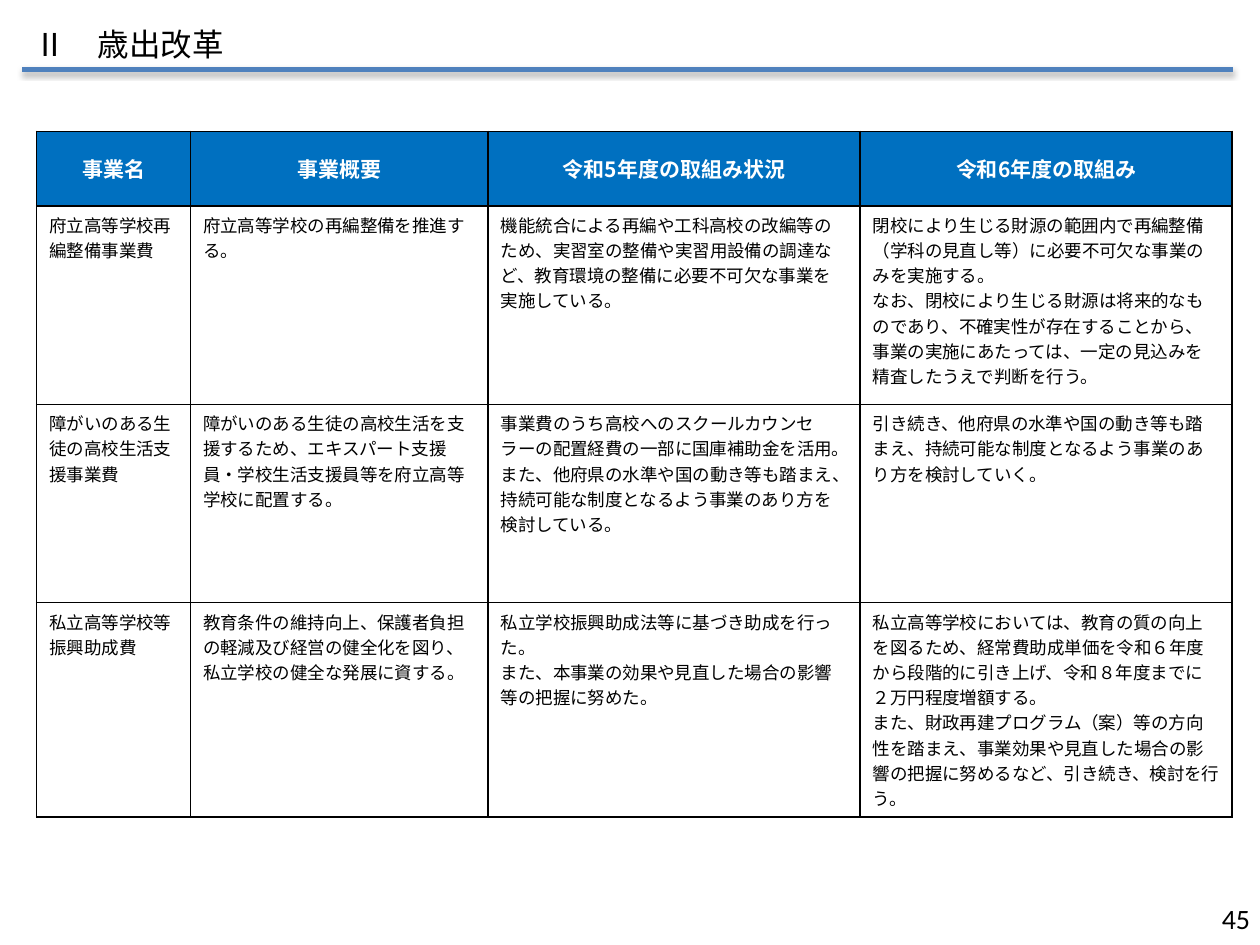
from lxml import etree
from pptx import Presentation, util as u
from pptx.dml.color import RGBColor
from pptx.enum import shapes, text
from pptx.oxml import parse_xml
from pptx.oxml.ns import nsdecls, qn

JAPANESE = "Noto Sans CJK JP"
HEADINGS = ["事業名", "事業概要", "令和5年度の取組み状況", "令和6年度の取組み"]
PROJECTS = [
    ["府立高等学校再編整備事業費",
     "府立高等学校の再編整備を推進する。",
     "機能統合による再編や工科高校の改編等のため、実習室の整備や実習用設備の調達など、"
     "教育環境の整備に必要不可欠な事業を実施している。",
     "閉校により生じる財源の範囲内で再編整備（学科の⾒直し等）に必要不可⽋な事業のみを実施する。\n"
     "なお、閉校により生じる財源は将来的なものであり、不確実性が存在することから、"
     "事業の実施にあたっては、⼀定の⾒込みを精査したうえで判断を⾏う。"],
    ["障がいのある生徒の高校生活支援事業費",
     "障がいのある生徒の高校生活を支援するため、エキスパート支援員・学校生活支援員等を"
     "府立高等学校に配置する。",
     "事業費のうち高校へのスクールカウンセラーの配置経費の一部に国庫補助金を活用。\n"
     "また、他府県の水準や国の動き等も踏まえ、持続可能な制度となるよう事業のあり方を検討している。",
     "引き続き、他府県の水準や国の動き等も踏まえ、持続可能な制度となるよう事業のあり方を検討していく。"],
    ["私立高等学校等振興助成費",
     "教育条件の維持向上、保護者負担の軽減及び経営の健全化を図り、私立学校の健全な発展に資する。",
     "私立学校振興助成法等に基づき助成を行った。\n"
     "また、本事業の効果や見直した場合の影響等の把握に努めた。",
     "私立高等学校においては、教育の質の向上を図るため、経常費助成単価を令和６年度から"
     "段階的に引き上げ、令和８年度までに２万円程度増額する。\n"
     "また、財政再建プログラム（案）等の方向性を踏まえ、事業効果や見直した場合の影響の"
     "把握に努めるなど、引き続き、検討を行う。"],
]


def colour(code):
    return RGBColor.from_string(code)


class SlideBuilder:
    """Holds the style and the current slide."""

    styles = {
        "title": {"name": JAPANESE, "size": u.Pt(18), "bold": False},
        "heading": {"name": JAPANESE, "size": u.Pt(12), "bold": True},
        "body": {"name": JAPANESE, "size": u.Pt(10), "bold": False},
        "number": {"name": "Calibri", "size": u.Pt(16), "bold": False},
    }
    black, white, blue, rule_blue = "000000", "FFFFFF", "0070C0", "4F81BD"

    def __init__(self, presentation):
        self.slide = presentation.slides.add_slide(presentation.slide_layouts[6])

    def fill_text(self, frame, words, style, ink, align=text.PP_ALIGN.LEFT):
        frame.text = words
        for paragraph in frame.paragraphs:
            paragraph.alignment = align
            for run in paragraph.runs:
                for key, value in self.styles[style].items():
                    setattr(run.font, key, value)
                run.font.color.rgb = colour(ink)
                east_asian = etree.SubElement(run.font._element, qn("a:ea"))
                east_asian.set("typeface", self.styles[style]["name"])

    def text_box(self, words, box, style, **options):
        frame = self.slide.shapes.add_textbox(*map(u.Cm, box)).text_frame
        frame.word_wrap = True
        frame.vertical_anchor = text.MSO_ANCHOR.MIDDLE
        self.fill_text(frame, words, style, self.black, **options)

    def shadowed_rule(self, left, right, y):
        line = self.slide.shapes.add_connector(
            shapes.MSO_CONNECTOR.STRAIGHT, u.Cm(left), u.Cm(y), u.Cm(right), u.Cm(y))
        line.line.color.rgb = colour(self.rule_blue)
        line.line.width = u.Pt(3)
        line._element.spPr.append(parse_xml(
            f'<a:effectLst {nsdecls("a")}><a:outerShdw blurRad="{u.Pt(3.1)}" '
            f'dist="{u.Pt(1.8)}" dir="5400000" rotWithShape="0">'
            f'<a:srgbClr val="{self.black}"><a:alpha val="35000"/></a:srgbClr>'
            '</a:outerShdw></a:effectLst>'))

    def borders(self, cell):
        properties = cell._tc.get_or_add_tcPr()
        for position, side in enumerate(("lnL", "lnR", "lnT", "lnB")):
            properties.insert(position, parse_xml(
                f'<a:{side} {nsdecls("a")} w="{u.Pt(1)}"><a:solidFill>'
                f'<a:srgbClr val="{self.black}"/></a:solidFill></a:{side}>'))

    def table(self, rows, left, top, widths, heights):
        table = self.slide.shapes.add_table(
            len(rows), len(widths), u.Cm(left), u.Cm(top),
            u.Cm(sum(widths)), u.Cm(sum(heights))).table
        table.first_row = table.horz_banding = False
        for column, width in zip(table.columns, widths):
            column.width = u.Cm(width)
        for row, height, contents in zip(table.rows, heights, rows):
            row.height = u.Cm(height)
            heading = contents is rows[0]
            for cell, words in zip(row.cells, contents):
                cell.fill.solid()
                cell.fill.fore_color.rgb = colour(self.blue if heading else self.white)
                self.borders(cell)
                if heading:
                    cell.vertical_anchor = text.MSO_ANCHOR.MIDDLE
                    self.fill_text(cell.text_frame, words, "heading", self.white,
                                   text.PP_ALIGN.CENTER)
                else:
                    self.fill_text(cell.text_frame, words, "body", self.black)


def main():
    presentation = Presentation()
    presentation.slide_width, presentation.slide_height = u.Cm(25.4), u.Cm(19.05)
    builder = SlideBuilder(presentation)

    # Project table
    builder.table([HEADINGS, *PROJECTS], 0.74, 2.65,
                  widths=[3.1, 6, 7.5, 7.5], heights=[1.5, 4, 4, 4])

    # Page number
    builder.text_box("45", (19.53, 18, 5.92, 1.02), "number", align=text.PP_ALIGN.RIGHT)

    # Title and its rule
    builder.shadowed_rule(0.45, 24.85, 1.4)
    builder.text_box("Ⅱ　歳出改革", (0.45, 0.38, 22.6, 1.02), "title")

    presentation.save("out.pptx")


if __name__ == "__main__":
    main()
